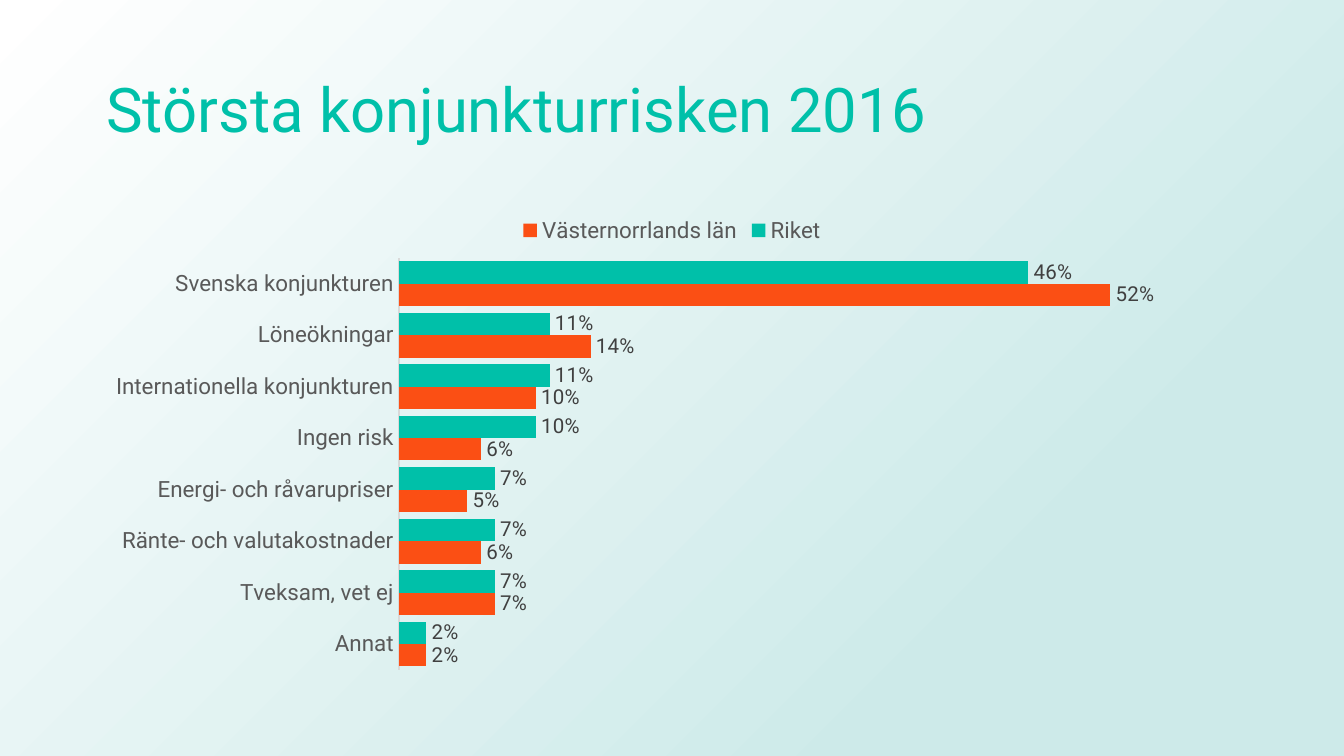
from lxml import etree
from pptx import Presentation
from pptx.chart.data import CategoryChartData
from pptx.dml.color import RGBColor
from pptx.enum.chart import XL_CHART_TYPE, XL_LABEL_POSITION, XL_LEGEND_POSITION, XL_TICK_MARK
from pptx.enum.shapes import MSO_SHAPE
from pptx.enum.text import MSO_ANCHOR, PP_ALIGN
from pptx.oxml.ns import qn
from pptx.util import Emu, Pt

PX = 914400 / 134.4
WIDTH, HEIGHT = 1344, 756
TEAL = RGBColor(0x00, 0xC0, 0xA9)
ORANGE = RGBColor(0xFB, 0x4F, 0x14)
PALE_TEAL = RGBColor(0xCD, 0xEA, 0xE9)
WHITE = RGBColor(0xFF, 0xFF, 0xFF)
GREY = RGBColor(0x59, 0x59, 0x59)
DARK_GREY = RGBColor(0x40, 0x40, 0x40)
LIGHT_GREY = RGBColor(0xD9, 0xD9, 0xD9)

RISKS = [
    # risk, Riket, Västernorrlands län
    ("Svenska konjunkturen", 0.46, 0.52),
    ("Löneökningar", 0.11, 0.14),
    ("Internationella konjunkturen", 0.11, 0.10),
    ("Ingen risk", 0.10, 0.06),
    ("Energi- och råvarupriser", 0.07, 0.05),
    ("Ränte- och valutakostnader", 0.07, 0.06),
    ("Tveksam, vet ej", 0.07, 0.07),
    ("Annat", 0.02, 0.02),
]


def box(*lengths):
    """Turn px lengths into EMU."""
    return [Emu(round(length * PX)) for length in lengths]


def set_font(font, size, color):
    font.name = "Roboto"
    font.size = Pt(size)
    font.bold = False
    font.color.rgb = color


prs = Presentation()
prs.slide_width, prs.slide_height = box(WIDTH, HEIGHT)
slide = prs.slides.add_slide(prs.slide_layouts[5])

# Diagonal background, behind everything else
backdrop = slide.shapes.add_shape(MSO_SHAPE.RECTANGLE, *box(0, 0, WIDTH, HEIGHT))
backdrop.shadow.inherit = False
backdrop.line.fill.background()
backdrop.fill.gradient()
backdrop.fill.gradient_angle = 315
for stop, color, position in zip(backdrop.fill.gradient_stops, (WHITE, PALE_TEAL), (0, 0.77)):
    stop.color.rgb = color
    stop.position = position
slide.shapes._spTree.insert(2, backdrop._element)

# Title
title = slide.shapes.title
title.left, title.top, title.width, title.height = box(93, 40, 1158, 146)
title.text_frame.text = "Största konjunkturrisken 2016"
title.text_frame.vertical_anchor = MSO_ANCHOR.MIDDLE
heading = title.text_frame.paragraphs[0]
heading.alignment = PP_ALIGN.LEFT
heading.line_spacing = 0.9
set_font(heading.font, 33, TEAL)

# Bar chart
risk_data = CategoryChartData(number_format="0%")
names, country, county = zip(*RISKS)
risk_data.categories = names
risk_data.add_series("Riket", country)
risk_data.add_series("Västernorrlands län", county)
chart = slide.shapes.add_chart(
    XL_CHART_TYPE.BAR_CLUSTERED, *box(93, 202, 1158, 478), risk_data
).chart
chart.has_title = False
chart.font.name = "Calibri"
chart.font.size = Pt(10)

chart.has_legend = True
chart.legend.position = XL_LEGEND_POSITION.TOP
chart.legend.include_in_layout = False
set_font(chart.legend.font, 12, GREY)

risk_axis = chart.category_axis
risk_axis.reverse_order = True
risk_axis.major_tick_mark = XL_TICK_MARK.NONE
risk_axis.format.line.color.rgb = LIGHT_GREY
risk_axis.format.line.width = Pt(0.75)
set_font(risk_axis.tick_labels.font, 12, GREY)

share_axis = chart.value_axis
share_axis.minimum_scale, share_axis.maximum_scale = 0, 0.6
share_axis.has_major_gridlines = False
share_axis.visible = False

bars = chart.plots[0]
bars.gap_width = 30
bars.overlap = 0
bars.vary_by_categories = False
for series, color in zip(bars.series, (TEAL, ORANGE)):
    series.format.fill.solid()
    series.format.fill.fore_color.rgb = color
    labels = series.data_labels
    labels.show_value = True
    labels.number_format = "0%"
    labels.number_format_is_linked = False
    labels.position = XL_LABEL_POSITION.OUTSIDE_END
    set_font(labels.font, 11, DARK_GREY)

# Fixed plot area, as fractions of the chart
plot_area = chart._chartSpace.chart.plotArea
for old_layout in plot_area.findall(qn("c:layout")):
    plot_area.remove(old_layout)
layout = etree.Element(qn("c:layout"))
manual = etree.SubElement(layout, qn("c:manualLayout"))
for tag, value in (
    ("layoutTarget", "inner"), ("xMode", "edge"), ("yMode", "edge"),
    ("x", 306 / 1158), ("y", 56 / 478), ("w", 821 / 1158), ("h", 412 / 478),
):
    etree.SubElement(manual, qn(f"c:{tag}")).set("val", str(value))
plot_area.insert(0, layout)

prs.save("out.pptx")
